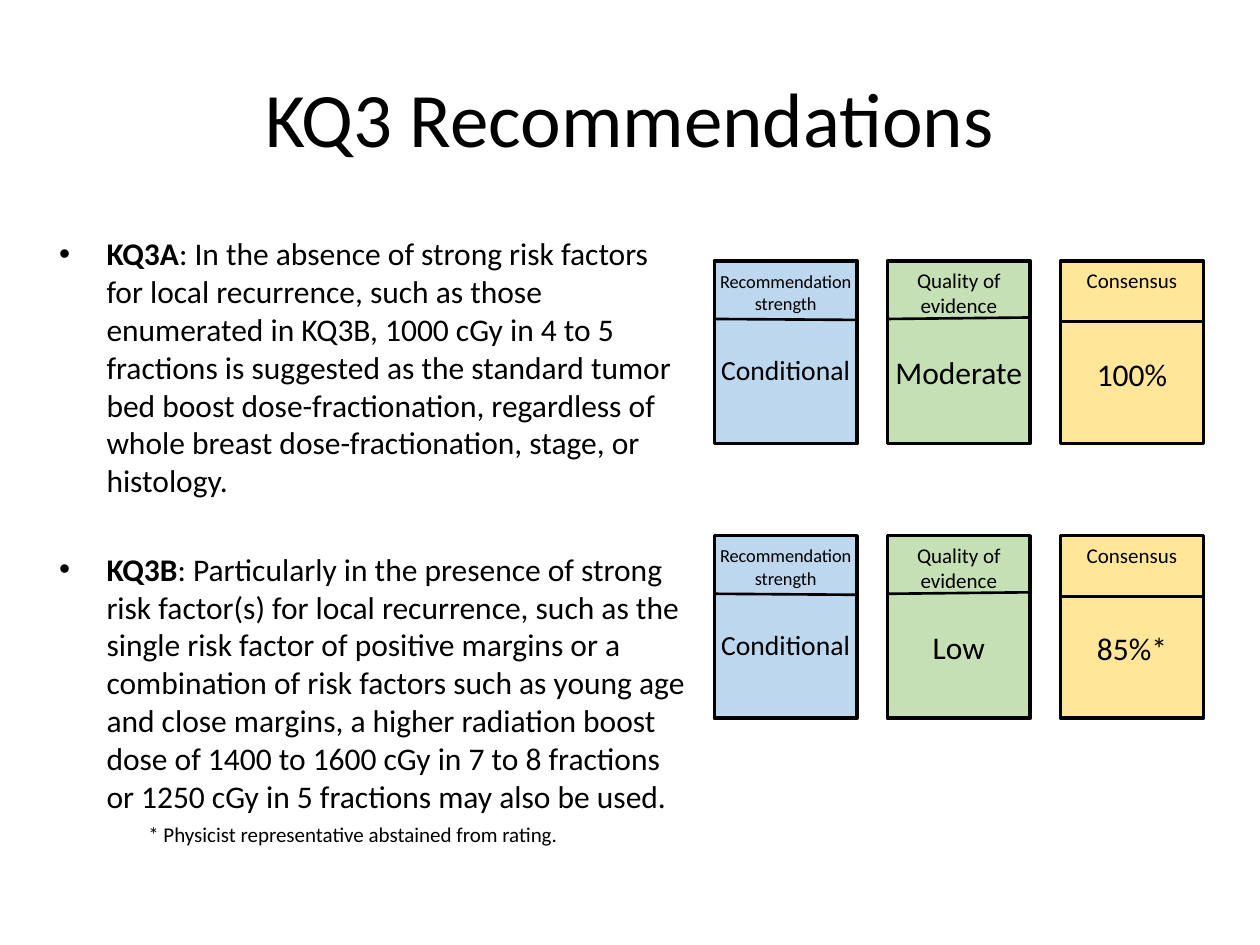
from dataclasses import dataclass

from pptx import Presentation
from pptx.dml.color import RGBColor
from pptx.enum.shapes import MSO_CONNECTOR, MSO_SHAPE
from pptx.enum.text import MSO_AUTO_SIZE, PP_ALIGN
from pptx.oxml.ns import qn
from pptx.util import Cm, Pt

BLACK = RGBColor(0x00, 0x00, 0x00)
BLUE = RGBColor(0xBD, 0xD7, 0xEE)
GREEN = RGBColor(0xC5, 0xE0, 0xB4)
YELLOW = RGBColor(0xFF, 0xE6, 0x99)
FONT = "Calibri"

# Card grid, in cm
LEFT, TOP = 14.4, 5.26
COL_STEP, ROW_STEP = 3.49, 5.54
CARD_W, CARD_H = 2.88, 3.68


@dataclass(frozen=True)
class CardStyle:
    """Look of one column; offsets and margins are in cm, sizes in points."""
    label: str
    fill: RGBColor
    label_size: float
    label_margins: tuple[float, float]
    value_size: float
    value_top: float
    divider: tuple[float, float]


@dataclass(frozen=True)
class Recommendation:
    code: str
    text: str
    ratings: tuple[str, str, str]


STYLES = [
    CardStyle("Recommendation strength", BLUE, 10.5, (0.1, 0.18), 15.8, 1.73, (1.17, 1.19)),
    CardStyle("Quality of evidence", GREEN, 12, (0.25, 0.13), 18, 1.73, (1.17, 1.14)),
    CardStyle("Consensus", YELLOW, 12, (0.25, 0.13), 18, 1.76, (1.22, 1.22)),
]

RECOMMENDATIONS = [
    Recommendation(
        "KQ3A",
        ": In the absence of strong risk factors for local recurrence, such as those "
        "enumerated in KQ3B, 1000 cGy in 4 to 5 fractions is suggested as the standard "
        "tumor bed boost dose-fractionation, regardless of whole breast "
        "dose-fractionation, stage, or histology.",
        ("Conditional", "Moderate", "100%"),
    ),
    Recommendation(
        "KQ3B",
        ": Particularly in the presence of strong risk factor(s) for local recurrence, "
        "such as the single risk factor of positive margins or a combination of risk "
        "factors such as young age and close margins, a higher radiation boost dose of "
        "1400 to 1600 cGy in 7 to 8 fractions or 1250 cGy in 5 fractions may also be used.",
        ("Conditional", "Low", "85%*"),
    ),
]


def set_font(p, size: float) -> None:
    p.font.name = FONT
    p.font.size = Pt(size)
    p.font.color.rgb = BLACK


def place(shape, left: float, top: float, width: float, height: float) -> None:
    shape.left, shape.top = Cm(left), Cm(top)
    shape.width, shape.height = Cm(width), Cm(height)


def add_text(s, text: str, box: tuple[float, float, float, float], size: float,
             align: PP_ALIGN, margins: tuple[float, float] = (0.25, 0.13)) -> None:
    tf = s.shapes.add_textbox(*map(Cm, box)).text_frame
    tf.word_wrap = True
    tf.margin_left = tf.margin_right = Cm(margins[0])
    tf.margin_top = tf.margin_bottom = Cm(margins[1])
    p = tf.paragraphs[0]
    p.text = text
    p.alignment = align
    set_font(p, size)


def add_divider(s, left: float, start: float, end: float) -> None:
    line = s.shapes.add_connector(
        MSO_CONNECTOR.STRAIGHT, Cm(left), Cm(start), Cm(left + CARD_W), Cm(end))
    line.line.color.rgb = BLACK
    line.line.width = Pt(1.5)
    sp_pr = line._element.spPr
    sp_pr.append(sp_pr.makeelement(qn("a:effectLst"), {}))


def add_card(s, style: CardStyle, value: str, left: float, top: float) -> None:
    card = s.shapes.add_shape(
        MSO_SHAPE.RECTANGLE, Cm(left), Cm(top), Cm(CARD_W), Cm(CARD_H))
    card.shadow.inherit = False
    card.fill.solid()
    card.fill.fore_color.rgb = style.fill
    card.line.color.rgb = BLACK
    card.line.width = Pt(2)
    start, end = style.divider
    add_divider(s, left, top + start, top + end)
    add_text(s, style.label, (left, top, CARD_W, 1.2), style.label_size,
             PP_ALIGN.CENTER, style.label_margins)
    add_text(s, value, (left, top + style.value_top, CARD_W, 1), style.value_size,
             PP_ALIGN.CENTER, (0.1, 0.13))


def fill_title(title) -> None:
    place(title, 1.27, 0.76, 22.86, 3.18)
    p = title.text_frame.paragraphs[0]
    p.text = "KQ3 Recommendations"
    p.alignment = PP_ALIGN.CENTER
    set_font(p, 44)


def fill_body(body) -> None:
    place(body, 0.94, 4.6, 13.2, 10.97)
    tf = body.text_frame
    tf.auto_size = MSO_AUTO_SIZE.NONE
    for i, rec in enumerate(RECOMMENDATIONS):
        p = tf.add_paragraph() if i else tf.paragraphs[0]
        p.space_before = Pt(29 if i else 0)
        set_font(p, 18)
        r = p.add_run()
        r.text = rec.code
        r.font.bold = True
        p.add_run().text = rec.text


def main() -> None:
    prs = Presentation()
    prs.slide_width, prs.slide_height = Cm(25.4), Cm(19.05)
    s = prs.slides.add_slide(prs.slide_layouts[1])
    fill_title(s.shapes.title)
    fill_body(s.placeholders[1])
    for row, rec in enumerate(RECOMMENDATIONS):
        for col, (style, value) in enumerate(zip(STYLES, rec.ratings)):
            add_card(s, style, value, LEFT + col * COL_STEP, TOP + row * ROW_STEP)
    add_text(s, "* Physicist representative abstained from rating.",
             (2.74, 16.43, 8.79, 0.76), 12, PP_ALIGN.LEFT)
    prs.save("out.pptx")


if __name__ == "__main__":
    main()
